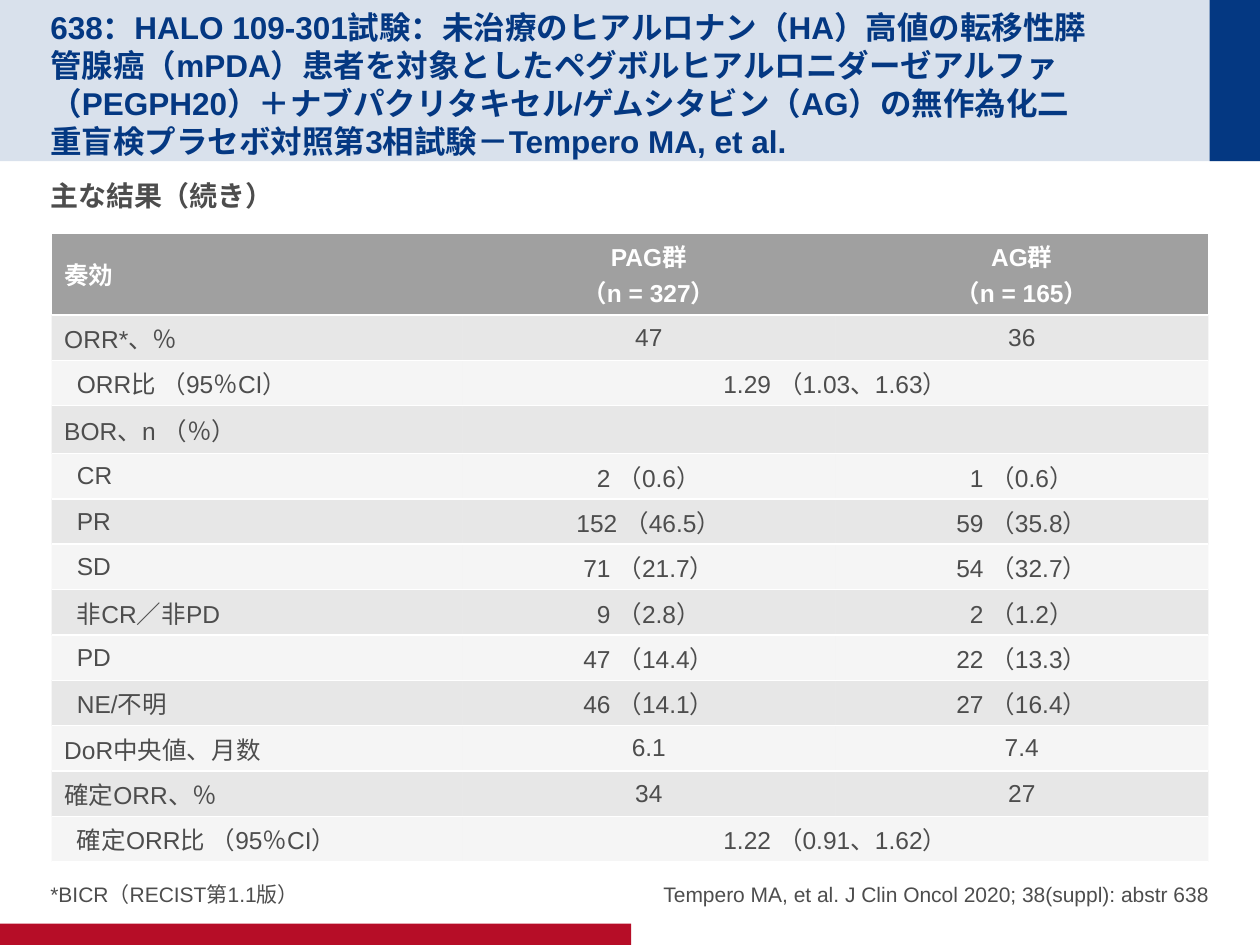
"""Build the response-results slide of the HALO 109-301 trial."""
from dataclasses import dataclass

import lxml.etree
import pptx
import pptx.dml.color
import pptx.enum.shapes
import pptx.enum.text
import pptx.oxml.ns
import pptx.util

Inches = pptx.util.Inches
Pt = pptx.util.Pt
PP_ALIGN = pptx.enum.text.PP_ALIGN
MSO_ANCHOR = pptx.enum.text.MSO_ANCHOR
qn = pptx.oxml.ns.qn


@dataclass(frozen=True)
class Theme:
    font: str = "Arial"
    navy: str = "043882"
    red: str = "B60D27"
    text: str = "4D4D4D"
    grey: str = "A0A0A0"
    white: str = "FFFFFF"
    title_size: int = 18
    heading_size: int = 16
    table_size: int = 14
    note_size: int = 12


@dataclass(frozen=True)
class Band:
    left: float
    top: float
    width: float
    height: float
    color: str
    opacity: int = 100


@dataclass(frozen=True)
class Label:
    left: float
    top: float
    width: float
    height: float
    text: str
    size: int
    color: str
    bold: bool = False
    anchor: MSO_ANCHOR = MSO_ANCHOR.TOP
    align: PP_ALIGN = PP_ALIGN.LEFT
    inset: float = 0


@dataclass(frozen=True)
class Row:
    label: str
    pag: str = ""
    ag: str = ""
    indented: bool = False
    merged: bool = False


THEME = Theme()
BANDS = [
    Band(0, 0, 10, 1.28, THEME.navy, 15),
    Band(9.6, 0, 0.4, 1.28, THEME.navy),
    Band(0, 7.33, 5.01, 0.17, THEME.red),
]
LABELS = [
    Label(0.4, 0.2, 8.23, 0.88,
          "638：HALO 109-301試験：未治療のヒアルロナン（HA）高値の転移性膵管腺癌（mPDA）患者を対象とした"
          "ペグボルヒアルロニダーゼアルファ（PEGPH20）＋ナブパクリタキセル/ゲムシタビン（AG）の"
          "無作為化二重盲検プラセボ対照第3相試験－Tempero MA, et al.",
          THEME.title_size, THEME.navy, True, MSO_ANCHOR.MIDDLE, inset=0.05),
    Label(0.4, 1.37, 9.2, 0.4, "主な結果（続き）",
          THEME.heading_size, THEME.text, True, inset=0.05),
    Label(0.4, 6.67, 4.3, 0.53, "*BICR（RECIST第1.1版）",
          THEME.note_size, THEME.text, anchor=MSO_ANCHOR.BOTTOM),
    Label(5.08, 6.67, 4.52, 0.53, "Tempero MA, et al. J Clin Oncol 2020; 38(suppl): abstr 638",
          THEME.note_size, THEME.text, anchor=MSO_ANCHOR.BOTTOM, align=PP_ALIGN.RIGHT),
]
ROWS = [
    Row("奏効", "PAG群\n（n = 327）", "AG群\n（n = 165）"),
    Row("ORR*、％", "47", "36"),
    Row("ORR比 （95％CI）", "1.29 （1.03、1.63）", indented=True, merged=True),
    Row("BOR、n （％）"),
    Row("CR", "2 （0.6）", "1 （0.6）", True),
    Row("PR", "152 （46.5）", "59 （35.8）", True),
    Row("SD", "71 （21.7）", "54 （32.7）", True),
    Row("非CR／非PD", "9 （2.8）", "2 （1.2）", True),
    Row("PD", "47 （14.4）", "22 （13.3）", True),
    Row("NE/不明", "46 （14.1）", "27 （16.4）", True),
    Row("DoR中央値、月数", "6.1", "7.4"),
    Row("確定ORR、％", "34", "27"),
    Row("確定ORR比 （95％CI）", "1.22 （0.91、1.62）", indented=True, merged=True),
]
COLUMN_WIDTHS = [3.26, 2.96, 2.96]
HEADER_HEIGHT, ROW_HEIGHT = 0.65, 0.36


def rgb(color: str) -> pptx.dml.color.RGBColor:
    return pptx.dml.color.RGBColor.from_string(color)


def fill_solid(target, props, color: str, opacity: int) -> None:
    target.fill.solid()
    target.fill.fore_color.rgb = rgb(color)
    if opacity < 100:
        clr = props.find(qn("a:solidFill")).find(qn("a:srgbClr"))
        lxml.etree.SubElement(clr, qn("a:alpha"), val=str(opacity * 1000))


def write_text(p, text: str, size: int, color: str, bold: bool) -> None:
    for i, line in enumerate(text.split("\n")):
        if i:
            p.add_line_break()
        r = p.add_run()
        r.text = line
        r.font.name = THEME.font
        r.font.size = Pt(size)
        r.font.bold = bold
        r.font.color.rgb = rgb(color)


def draw_band(s, band: Band) -> None:
    sp = s.shapes.add_shape(pptx.enum.shapes.MSO_SHAPE.RECTANGLE, Inches(band.left),
                            Inches(band.top), Inches(band.width), Inches(band.height))
    sp.shadow.inherit = False
    sp.line.fill.background()
    fill_solid(sp, sp.element.spPr, band.color, band.opacity)


def draw_label(s, label: Label) -> None:
    sp = s.shapes.add_textbox(Inches(label.left), Inches(label.top),
                              Inches(label.width), Inches(label.height))
    tf = sp.text_frame
    tf.word_wrap = True
    tf.vertical_anchor = label.anchor
    tf.margin_left = tf.margin_right = tf.margin_bottom = 0
    tf.margin_top = Inches(label.inset)
    p = tf.paragraphs[0]
    p.alignment = label.align
    write_text(p, label.text, label.size, label.color, label.bold)


def set_borders(props) -> None:
    for i, side in enumerate(("lnL", "lnR", "lnT", "lnB")):
        ln = lxml.etree.Element(qn(f"a:{side}"), w=str(Pt(1)))
        if side in ("lnT", "lnB"):
            paint = lxml.etree.SubElement(ln, qn("a:solidFill"))
            lxml.etree.SubElement(paint, qn("a:srgbClr"), val=THEME.white)
        else:
            lxml.etree.SubElement(ln, qn("a:noFill"))
        props.insert(i, ln)


def draw_cell(cell, text: str, row: int, col: int, indented: bool) -> None:
    header = row == 0
    cell.vertical_anchor = MSO_ANCHOR.MIDDLE
    cell.margin_left = cell.margin_right = Inches(0.1)
    cell.margin_top = cell.margin_bottom = Inches(0.04)
    props = cell._tc.get_or_add_tcPr()
    fill_solid(cell, props, THEME.grey, 100 if header else 25 if row % 2 else 10)
    set_borders(props)
    p = cell.text_frame.paragraphs[0]
    p.alignment = PP_ALIGN.CENTER if col else PP_ALIGN.LEFT
    if indented and col == 0:
        p._p.get_or_add_pPr().set("marL", str(Inches(0.1)))
    write_text(p, text, THEME.table_size, THEME.white if header else THEME.text, header)


def draw_table(s, rows: list[Row]) -> None:
    height = HEADER_HEIGHT + ROW_HEIGHT * (len(rows) - 1)
    table = s.shapes.add_table(len(rows), len(COLUMN_WIDTHS), Inches(0.41), Inches(1.85),
                               Inches(sum(COLUMN_WIDTHS)), Inches(height)).table
    table.first_row = table.horz_banding = False
    for column, width in zip(table.columns, COLUMN_WIDTHS):
        column.width = Inches(width)
    for i, row in enumerate(rows):
        table.rows[i].height = Inches(ROW_HEIGHT if i else HEADER_HEIGHT)
        for j, text in enumerate((row.label, row.pag, row.ag)):
            draw_cell(table.cell(i, j), text, i, j, row.indented)
        if row.merged:
            table.cell(i, 1).merge(table.cell(i, 2))


def main() -> None:
    prs = pptx.Presentation()
    prs.slide_width, prs.slide_height = Inches(10), Inches(7.5)
    s = prs.slides.add_slide(prs.slide_layouts[6])
    for band in BANDS:
        draw_band(s, band)
    for label in LABELS:
        draw_label(s, label)
    draw_table(s, ROWS)
    prs.save("out.pptx")


if __name__ == "__main__":
    main()
